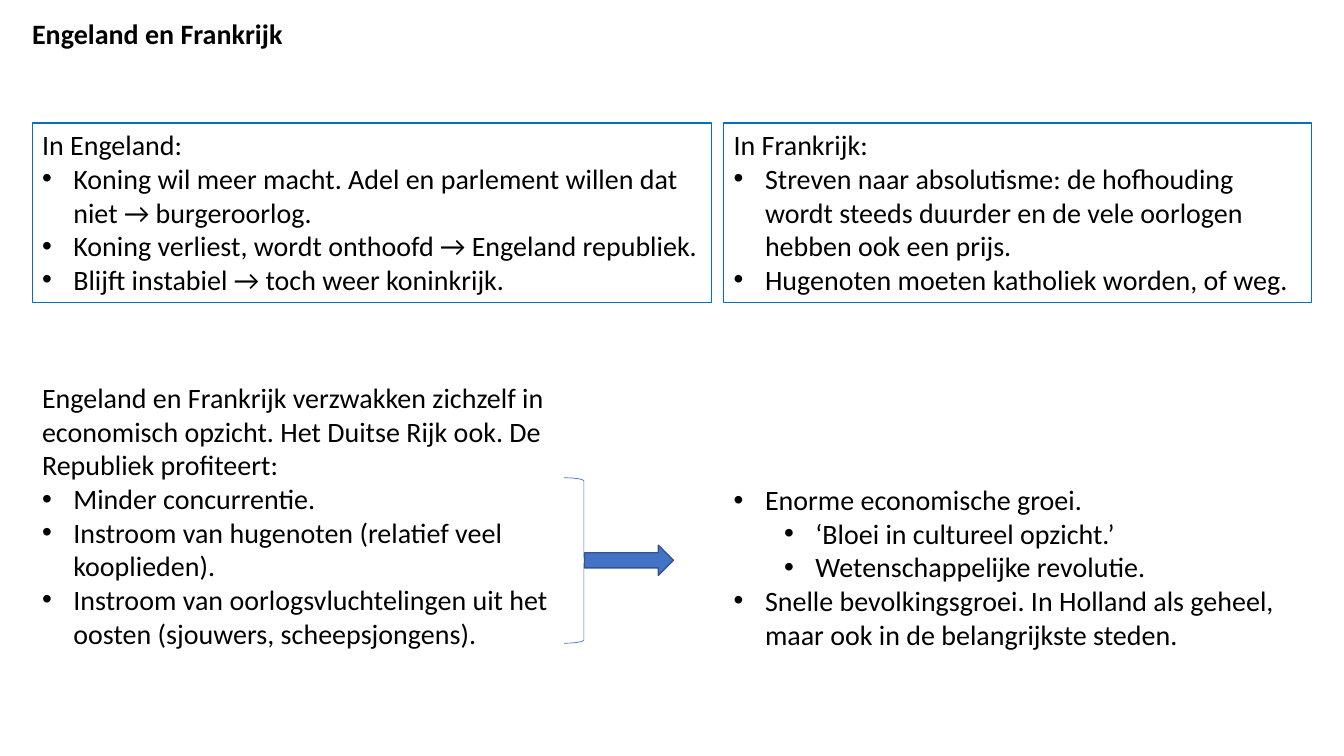
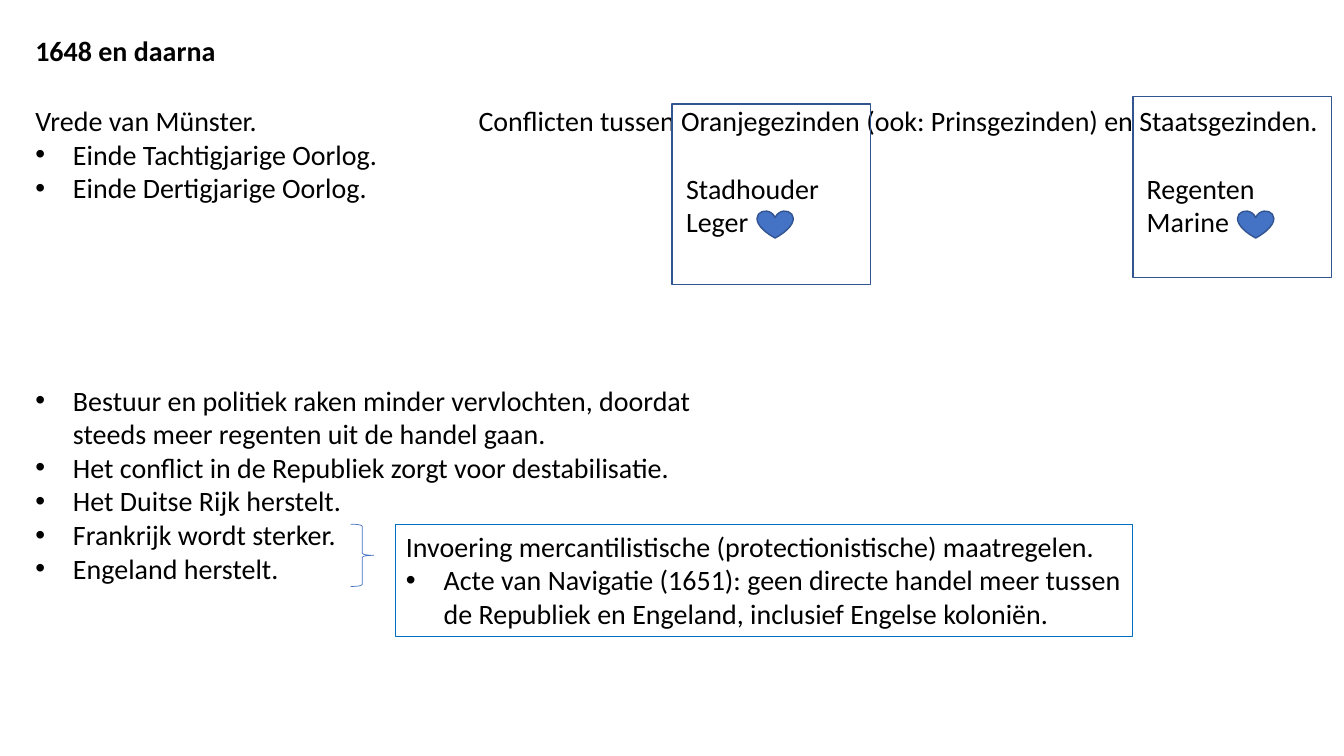
from lxml import etree
from pptx import Presentation
from pptx.dml.color import RGBColor
from pptx.enum import shapes, text
from pptx.oxml import ns
from pptx.util import Cm, Pt

FONT = "Calibri"
SIZE = 20
BLACK = "000000"
ACCENT = "4472C4"
ACCENT_DARK = "325491"
BOX_LINE = "0070C0"
NESTED_STEP = 1.27
PRESETS = shapes.MSO_SHAPE


def colour(hex_code):
    """Turn a hex string into a colour."""
    return RGBColor.from_string(hex_code)


def add_outline(slide, preset, area, line, width, fill=None):
    """Draw a preset shape with the given line and optional fill."""
    outline = slide.shapes.add_shape(preset, *map(Cm, area))
    outline.shadow.inherit = False
    if fill:
        outline.fill.solid()
        outline.fill.fore_color.rgb = colour(fill)
    else:
        outline.fill.background()
    outline.line.color.rgb = colour(line)
    outline.line.width = Pt(width)
    return outline


def set_bullet(paragraph, level, hang):
    """Give a paragraph a bullet with a hanging indent."""
    paragraph.level = level
    properties = paragraph._p.get_or_add_pPr()
    properties.set("marL", str(Cm(hang + level * NESTED_STEP)))
    properties.set("indent", str(-Cm(hang)))
    etree.SubElement(properties, ns.qn("a:buFont")).set("typeface", "Arial")
    etree.SubElement(properties, ns.qn("a:buChar")).set("char", "•")


def write_text(holder, lines, hang=0.79, bold=False):
    """Write plain strings as text and (level, string) pairs as bullets."""
    frame = holder.text_frame
    frame.word_wrap = True
    frame.vertical_anchor = text.MSO_ANCHOR.TOP
    for index, line in enumerate(lines):
        paragraph = frame.add_paragraph() if index else frame.paragraphs[0]
        paragraph.alignment = text.PP_ALIGN.LEFT
        if isinstance(line, tuple):
            level, wording = line
            set_bullet(paragraph, level, hang)
        else:
            wording = line
        paragraph.text = wording
        for run in paragraph.runs:
            run.font.name = FONT
            run.font.size = Pt(SIZE)
            run.font.bold = bold
            run.font.color.rgb = colour(BLACK)


def add_text(slide, area, lines, **style):
    """Add text without a border."""
    write_text(slide.shapes.add_textbox(*map(Cm, area)), lines, **style)


def add_title(slide, left, top, wording):
    """Add the bold slide title."""
    add_text(slide, (left, top, 15, 1.12), [wording], bold=True)


def add_boxed_text(slide, area, lines, **style):
    """Add text in a thin blue border."""
    box = add_outline(slide, PRESETS.RECTANGLE, area, BOX_LINE, 0.75)
    write_text(box, lines, **style)


def add_brace(slide, area):
    """Add a thin closing brace."""
    add_outline(slide, PRESETS.RIGHT_BRACE, area, ACCENT, 0.5)


def add_solid(slide, preset, area):
    """Add a filled symbol in the accent colour."""
    add_outline(slide, preset, area, ACCENT_DARK, 1, fill=ACCENT)


def add_faction(slide, left, top, supporters, heart_offset):
    """Frame a faction and list its supporters with a heart."""
    add_text(slide, (left + 0.1, 4.19, 4.6, 2.1), supporters)
    add_solid(slide, PRESETS.HEART, (left + heart_offset, 5.31, 0.91, 0.69))
    add_outline(slide, PRESETS.RECTANGLE, (left, top, 5, 4.55), ACCENT_DARK, 1)


def build_rivals(slide):
    """Build the slide on England and France."""
    left, right = 0.81, 18.24
    add_title(slide, 0.56, 0.3, "Engeland en Frankrijk")
    add_boxed_text(slide, (left, 3.1, 17.12, 4.52), [
        "In Engeland:",
        (0, "Koning wil meer macht. Adel en parlement willen dat niet → burgeroorlog."),
        (0, "Koning verliest, wordt onthoofd → Engeland republiek."),
        (0, "Blijft instabiel → toch weer koninkrijk."),
    ])
    add_boxed_text(slide, (right, 3.1, 14.81, 4.52), [
        "In Frankrijk:",
        (0, "Streven naar absolutisme: de hofhouding wordt steeds duurder "
            "en de vele oorlogen hebben ook een prijs."),
        (0, "Hugenoten moeten katholiek worden, of weg."),
    ])
    add_text(slide, (left, 9.47, 13.92, 7.87), [
        "Engeland en Frankrijk verzwakken zichzelf in economisch opzicht. "
        "Het Duitse Rijk ook. De Republiek profiteert:",
        (0, "Minder concurrentie."),
        (0, "Instroom van hugenoten (relatief veel kooplieden)."),
        (0, "Instroom van oorlogsvluchtelingen uit het oosten (sjouwers, scheepsjongens)."),
    ])
    add_text(slide, (right, 12.04, 14.35, 5.31), [
        (0, "Enorme economische groei."),
        (1, "‘Bloei in cultureel opzicht.’"),
        (1, "Wetenschappelijke revolutie."),
        (0, "Snelle bevolkingsgroei. In Holland als geheel, "
            "maar ook in de belangrijkste steden."),
    ])
    add_brace(slide, (14.22, 12.04, 0.99, 4.17))
    add_solid(slide, PRESETS.RIGHT_ARROW, (14.73, 13.74, 2.24, 0.76))


def build_aftermath(slide):
    """Build the slide on 1648 and the years after."""
    left, hang = 0.64, 0.95
    add_title(slide, left, 0.71, "1648 en daarna")
    add_text(slide, (left, 2.49, 11.61, 2.82), [
        "Vrede van Münster.",
        (0, "Einde Tachtigjarige Oorlog."),
        (0, "Einde Dertigjarige Oorlog."),
    ], hang=hang)
    add_text(slide, (11.81, 2.49, 22.05, 1.12), [
        "Conflicten tussen Oranjegezinden (ook: Prinsgezinden) en Staatsgezinden.",
    ])
    add_faction(slide, 16.94, 2.62, ["Stadhouder", "Leger"], 2.14)
    add_faction(slide, 28.55, 2.44, ["Regenten", "Marine"], 2.64)
    add_text(slide, (left, 9.53, 17.07, 6.25), [
        (0, "Bestuur en politiek raken minder vervlochten, doordat "
            "steeds meer regenten uit de handel gaan."),
        (0, "Het conflict in de Republiek zorgt voor destabilisatie."),
        (0, "Het Duitse Rijk herstelt."),
        (0, "Frankrijk wordt sterker."),
        (0, "Engeland herstelt."),
    ], hang=hang)
    add_brace(slide, (8.84, 13.21, 0.58, 1.57))
    add_boxed_text(slide, (9.98, 13.21, 18.55, 2.82), [
        "Invoering mercantilistische (protectionistische) maatregelen.",
        (0, "Acte van Navigatie (1651): geen directe handel meer tussen "
            "de Republiek en Engeland, inclusief Engelse koloniën."),
    ], hang=hang)


def main():
    """Build and save the presentation."""
    deck = Presentation()
    deck.slide_width, deck.slide_height = Cm(33.87), Cm(19.05)
    for build in (build_rivals, build_aftermath):
        build(deck.slides.add_slide(deck.slide_layouts[6]))
    deck.save("out.pptx")


if __name__ == "__main__":
    main()
